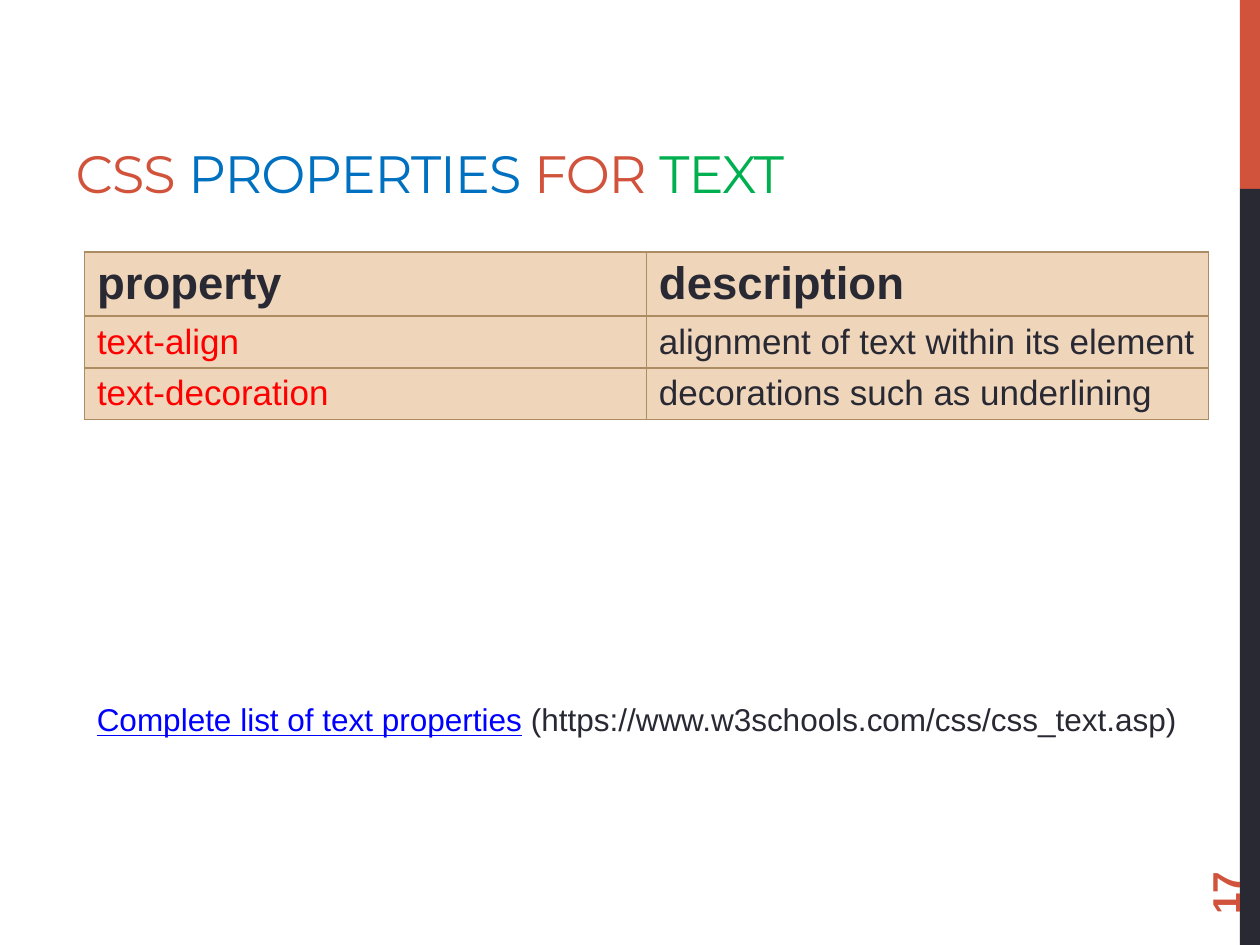
from lxml import etree
from pptx import Presentation
from pptx.dml.color import RGBColor
from pptx.enum.shapes import MSO_SHAPE
from pptx.enum.text import MSO_ANCHOR, MSO_AUTO_SIZE, PP_ALIGN
from pptx.oxml.ns import qn
from pptx.util import Inches, Pt

RECTANGLE = MSO_SHAPE.RECTANGLE
BOTTOM, MIDDLE = MSO_ANCHOR.BOTTOM, MSO_ANCHOR.MIDDLE
LEFT = PP_ALIGN.LEFT
NO_AUTOFIT = MSO_AUTO_SIZE.NONE

ACCENT, DARK, RED = "D2533C", "292934", "FF0000"
BLUE, GREEN, LINK = "0070C0", "00B050", "0000FF"
CELL_FILL, CELL_BORDER = "EFD5BA", "AB8C63"


def color(hex_string):
    return RGBColor.from_string(hex_string)


def add_run(paragraph, text, size, hex_string, font_name="Arial", bold=False):
    run = paragraph.add_run()
    run.text = text
    run.font.name = font_name
    run.font.size = Pt(size)
    run.font.bold = bold
    run.font.color.rgb = color(hex_string)
    return run


presentation = Presentation()
presentation.slide_width = Inches(10)
presentation.slide_height = Inches(7.5)
slide = presentation.slides.add_slide(presentation.slide_layouts[5])

# Side bar
for top, height, fill in [(0, 1.5, ACCENT), (1.5, 6, DARK)]:
    bar = slide.shapes.add_shape(
        RECTANGLE, Inches(9.84), Inches(top), Inches(0.16), Inches(height))
    bar.shadow.inherit = False
    bar.fill.solid()
    bar.fill.fore_color.rgb = color(fill)
    bar.line.fill.background()

# Title
title = slide.shapes.title
title.left, title.top = Inches(0.5), Inches(0.17)
title.width, title.height = Inches(8.33), Inches(1.5)
title.text_frame.auto_size = NO_AUTOFIT
title.text_frame.vertical_anchor = BOTTOM
paragraph = title.text_frame.paragraphs[0]
paragraph.alignment = LEFT
for text, hex_string in [("CSS ", ACCENT), ("PROPERTIES", BLUE),
                         (" FOR ", ACCENT), ("TEXT", GREEN)]:
    run = add_run(paragraph, text, 30, hex_string, "Montserrat")
    run._r.get_or_add_rPr().set("spc", "-60")

# Property table
rows = [("property", "description"),
        ("text-align", "alignment of text within its element"),
        ("text-decoration", "decorations such as underlining")]
row_heights = [0.51, 0.41, 0.41]
table = slide.shapes.add_table(
    len(rows), 2, Inches(0.67), Inches(2), Inches(8.92),
    Inches(sum(row_heights))).table
for column in table.columns:
    column.width = Inches(4.46)
for row_index, texts in enumerate(rows):
    table.rows[row_index].height = Inches(row_heights[row_index])
    is_header = row_index == 0
    for column_index, text in enumerate(texts):
        cell = table.cell(row_index, column_index)
        cell.vertical_anchor = MIDDLE
        is_property = column_index == 0 and not is_header
        add_run(cell.text_frame.paragraphs[0], text, 26 if is_header else 20,
                RED if is_property else DARK, bold=is_header)
        properties = cell._tc.get_or_add_tcPr()
        for side in ("a:lnL", "a:lnR", "a:lnT", "a:lnB"):
            border = etree.SubElement(properties, qn(side), w=str(Pt(1)))
            border_fill = etree.SubElement(border, qn("a:solidFill"))
            etree.SubElement(border_fill, qn("a:srgbClr"), val=CELL_BORDER)
        cell.fill.solid()
        cell.fill.fore_color.rgb = color(CELL_FILL)

# Slide number
number = slide.shapes.add_textbox(
    Inches(9), Inches(6.44), Inches(1.44), Inches(0.4))
number.rotation = 270
number.text_frame.word_wrap = True
number.text_frame.vertical_anchor = MIDDLE
add_run(number.text_frame.paragraphs[0], "17", 22.2, ACCENT, bold=True)

# Reference line
reference = slide.shapes.add_textbox(
    Inches(0.67), Inches(5.51), Inches(8.86), Inches(0.4))
reference.text_frame.word_wrap = True
paragraph = reference.text_frame.paragraphs[0]
link_text = add_run(paragraph, "Complete list of text properties", 18, LINK)
link_text.font.underline = True
add_run(paragraph, " (https://www.w3schools.com/css/css_text.asp)", 18, DARK)

presentation.save("out.pptx")
